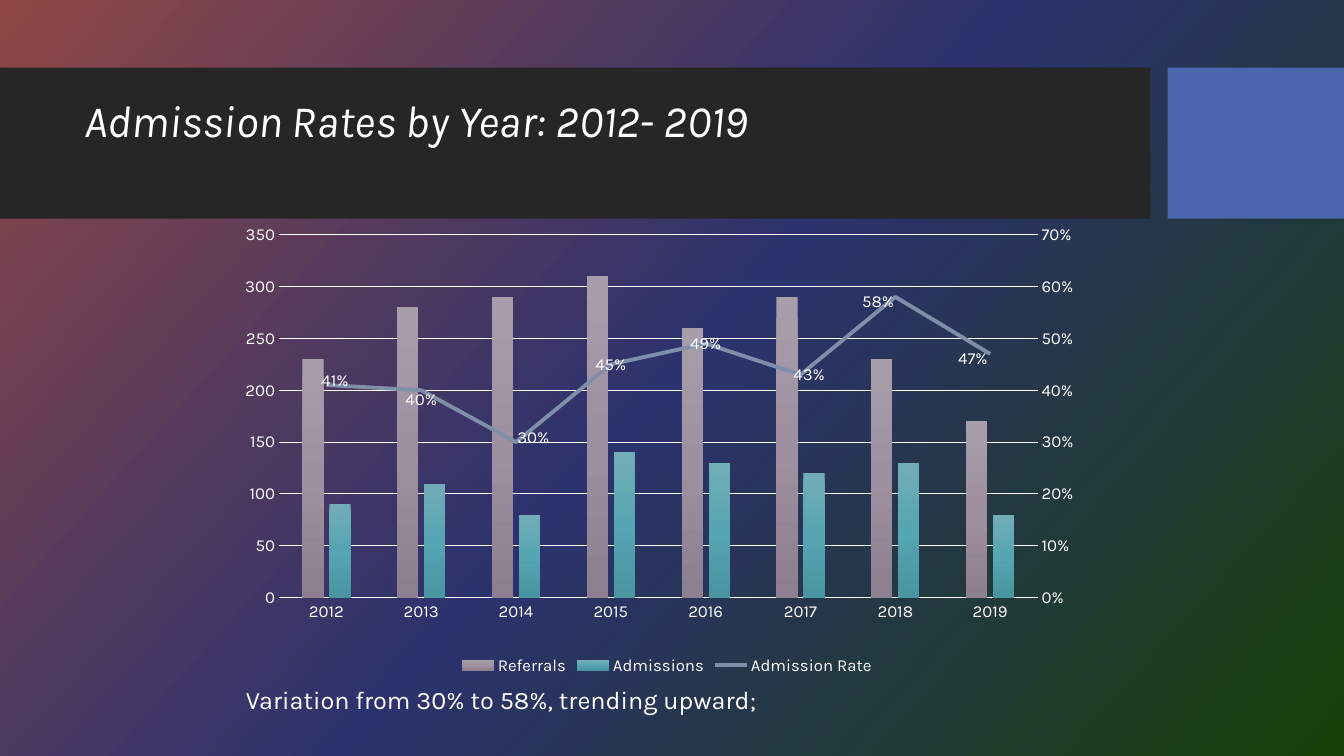
"""Build the slide on admission rates by year, with a combined column and line chart."""
from copy import deepcopy
from dataclasses import dataclass

from lxml.etree import SubElement
from pptx import Presentation
from pptx.chart.data import CategoryChartData
from pptx.dml.color import RGBColor
from pptx.enum.chart import (XL_CHART_TYPE as ChartType, XL_LABEL_POSITION as LabelPos,
                             XL_LEGEND_POSITION as LegendPos, XL_MARKER_STYLE as Marker,
                             XL_TICK_MARK as Tick)
from pptx.enum.shapes import MSO_SHAPE as Shape
from pptx.enum.text import MSO_ANCHOR as Anchor, MSO_AUTO_SIZE as AutoSize, PP_ALIGN as Align
from pptx.oxml import parse_xml
from pptx.oxml.ns import nsdecls, qn
from pptx.util import Inches, Pt


@dataclass(frozen=True)
class Theme:
    font: str = "Karla"
    text: str = "FFFFFF"
    band: str = "262626"
    accent: str = "4A66AC"
    rate: str = "7F8FA9"
    background: tuple = ("8F4745", "2C326E", "184108")
    title_size: int = 32
    caption_size: int = 18
    axis_size: int = 12
    chart_size: int = 10


@dataclass(frozen=True)
class Band:
    left: float
    width: float
    color: str


@dataclass(frozen=True)
class Columns:
    name: str
    values: tuple
    gradient: tuple


@dataclass(frozen=True)
class RatePoint:
    year: str
    rate: float
    dx: float
    dy: float


THEME = Theme()
BANDS = (Band(0, 11.41, THEME.band), Band(11.58, 1.75, THEME.accent))
COLUMNS = (
    Columns("Referrals", (230, 280, 290, 310, 260, 290, 230, 170),
            ("A89DAB", "9E8FA1", "8D7E90")),
    Columns("Admissions", (90, 110, 80, 140, 130, 120, 130, 80),
            ("71ADB7", "56A5B2", "4995A2")),
)
RATES = (
    RatePoint("2012", 0.41, 0.01, -0.01),
    RatePoint("2013", 0.40, 0, 0.02),
    RatePoint("2014", 0.30, 0.02, -0.01),
    RatePoint("2015", 0.45, 0, 0),
    RatePoint("2016", 0.49, 0, 0),
    RatePoint("2017", 0.43, 0.01, 0),
    RatePoint("2018", 0.58, -0.02, 0.01),
    RatePoint("2019", 0.47, -0.02, 0.01),
)


def style_font(font, size: float) -> None:
    """Set the theme face and text colour at a given size."""
    font.name = THEME.font
    font.size = Pt(size)
    font.color.rgb = RGBColor.from_string(THEME.text)


def set_gradient(fill, parent, colors: tuple, angle: int) -> None:
    """Give a fill evenly spaced stops along a clockwise angle."""
    fill.gradient()
    grad = next(parent.iter(qn("a:gradFill")))
    for child in list(grad):
        grad.remove(child)
    stops = SubElement(grad, qn("a:gsLst"))
    for i, color in enumerate(colors):
        stop = SubElement(stops, qn("a:gs"), pos=str(100000 * i // (len(colors) - 1)))
        SubElement(stop, qn("a:srgbClr"), val=color)
    SubElement(grad, qn("a:lin"), ang=str(angle * 60000), scaled="0")


def manual_layout(**values):
    """Return a chart layout element with the given settings."""
    layout = parse_xml(f"<c:layout {nsdecls('c')}><c:manualLayout/></c:layout>")
    for name, value in values.items():
        SubElement(layout[0], qn(f"c:{name}"), val=str(value))
    return layout


def set_values(element, **values) -> None:
    """Set the val attribute of named chart children."""
    for name, value in values.items():
        element.find(qn(f"c:{name}")).set("val", value)


def remove_children(element, name: str) -> None:
    """Remove every chart child of the given name."""
    for child in element.findall(qn(f"c:{name}")):
        element.remove(child)


def add_band(s, band: Band) -> None:
    """Draw one block of the title band."""
    sp = s.shapes.add_shape(Shape.RECTANGLE, Inches(band.left), Inches(0.67),
                            Inches(band.width), Inches(1.5))
    sp.shadow.inherit = False
    sp.fill.solid()
    sp.fill.fore_color.rgb = RGBColor.from_string(band.color)
    sp.line.fill.background()


def add_title(s, text: str) -> None:
    """Place the title over its band."""
    sp = s.shapes.title
    sp.left, sp.top, sp.width, sp.height = map(Inches, (0.74, 0.63, 10.51, 1.18))
    s.shapes.element.append(sp.element)
    tf = sp.text_frame
    tf.auto_size = AutoSize.NONE
    tf.vertical_anchor = Anchor.MIDDLE
    p = tf.paragraphs[0]
    p.alignment, p.line_spacing = Align.LEFT, 0.9
    r = p.add_run()
    r.text = text
    style_font(r.font, THEME.title_size)
    r.font.italic = True


def add_caption(s, text: str) -> None:
    """Write the finding under the chart."""
    tf = s.shapes.add_textbox(Inches(2.34), Inches(6.74), Inches(7.52), Inches(0.4)).text_frame
    tf.word_wrap = True
    tf.auto_size = AutoSize.SHAPE_TO_FIT_TEXT
    r = tf.paragraphs[0].add_run()
    r.text = text
    style_font(r.font, THEME.caption_size)


def style_axes(chart) -> None:
    """Format the category axis and the left value axis."""
    white = RGBColor.from_string(THEME.text)
    for axis in (chart.category_axis, chart.value_axis):
        axis.major_tick_mark = axis.minor_tick_mark = Tick.NONE
        style_font(axis.tick_labels.font, THEME.axis_size)
    line = chart.category_axis.format.line
    line.color.rgb, line.width = white, Pt(1)
    axis = chart.value_axis
    axis.minimum_scale, axis.maximum_scale, axis.major_unit = 0, 350, 50
    axis.has_major_gridlines = True
    axis.tick_labels.number_format = "0"
    axis.tick_labels.number_format_is_linked = False
    axis.format.line.fill.background()
    grid = axis.major_gridlines.format.line
    grid.color.rgb, grid.width = white, Pt(0.75)


def move_rate_to_line(chart, area) -> None:
    """Turn the last series into a line on a right-hand percentage axis."""
    columns = area.find(qn("c:barChart"))
    rate = columns.findall(qn("c:ser"))[-1]
    remove_children(rate, "invertIfNegative")
    line = parse_xml(f'<c:lineChart {nsdecls("c")}><c:grouping val="standard"/>'
                     '<c:varyColors val="0"/><c:marker val="1"/>'
                     '<c:axId val="5001"/><c:axId val="5002"/></c:lineChart>')
    line.insert(2, rate)
    columns.addnext(line)
    left = area.find(qn("c:valAx"))
    right, years = deepcopy(left), deepcopy(area.find(qn("c:catAx")))
    remove_children(right, "majorGridlines")
    right.find(qn("c:numFmt")).set("formatCode", "0%")
    set_values(right, axId="5002", crossAx="5001", axPos="r", crosses="max", majorUnit="0.1")
    set_values(right.find(qn("c:scaling")), max="0.7")
    set_values(years, axId="5001", crossAx="5002")
    years.get_or_add_delete_().set("val", "1")
    left.addnext(right)
    right.addnext(years)


def style_rate(series) -> None:
    """Format the rate line and place its labels."""
    series.smooth = False
    series.marker.style = Marker.NONE
    series.format.line.color.rgb = RGBColor.from_string(THEME.rate)
    series.format.line.width = Pt(2.75)
    for i in range(len(RATES)):
        label = series.points[i].data_label
        style_font(label.font, THEME.axis_size)
        label.position = LabelPos.CENTER
    for element, point in zip(series._element.iter(qn("c:dLbl")), RATES):
        element.find(qn("c:idx")).addnext(manual_layout(x=point.dx, y=point.dy))


def add_rate_chart(s) -> None:
    """Add the columns and the rate line as one chart."""
    data = CategoryChartData()
    data.categories = [point.year for point in RATES]
    for column in COLUMNS:
        data.add_series(column.name, column.values)
    data.add_series("Admission Rate", [point.rate for point in RATES], number_format="0%")
    chart = s.shapes.add_chart(ChartType.COLUMN_CLUSTERED, Inches(2.34), Inches(2.23),
                               Inches(8.55), Inches(4.51), data).chart
    chart.has_title = False
    style_font(chart.font, THEME.chart_size)
    chart.has_legend = True
    chart.legend.position = LegendPos.BOTTOM
    chart.legend.include_in_layout = False
    style_font(chart.legend.font, THEME.axis_size)
    style_axes(chart)
    area = next(chart._chartSpace.iter(qn("c:plotArea")))
    move_rate_to_line(chart, area)
    remove_children(area, "layout")
    area.insert(0, manual_layout(layoutTarget="inner", xMode="edge", yMode="edge",
                                 x=0.05, y=0.02, w=0.88, h=0.8))
    bars, line = chart.plots
    bars.vary_by_categories = False
    bars.gap_width, bars.overlap = 219, -27
    for series, column in zip(bars.series, COLUMNS):
        set_gradient(series.format.fill, series._element, column.gradient, 90)
    style_rate(line.series[0])


def main() -> None:
    """Build and save the slide."""
    prs = Presentation()
    prs.slide_width, prs.slide_height = Inches(13.33), Inches(7.5)
    s = prs.slides.add_slide(prs.slide_layouts[5])
    set_gradient(s.background.fill, s.element, THEME.background, 42)
    for band in BANDS:
        add_band(s, band)
    add_title(s, "Admission Rates by Year: 2012- 2019")
    add_rate_chart(s)
    add_caption(s, "Variation from 30% to 58%, trending upward;")
    prs.save("out.pptx")


if __name__ == "__main__":
    main()
